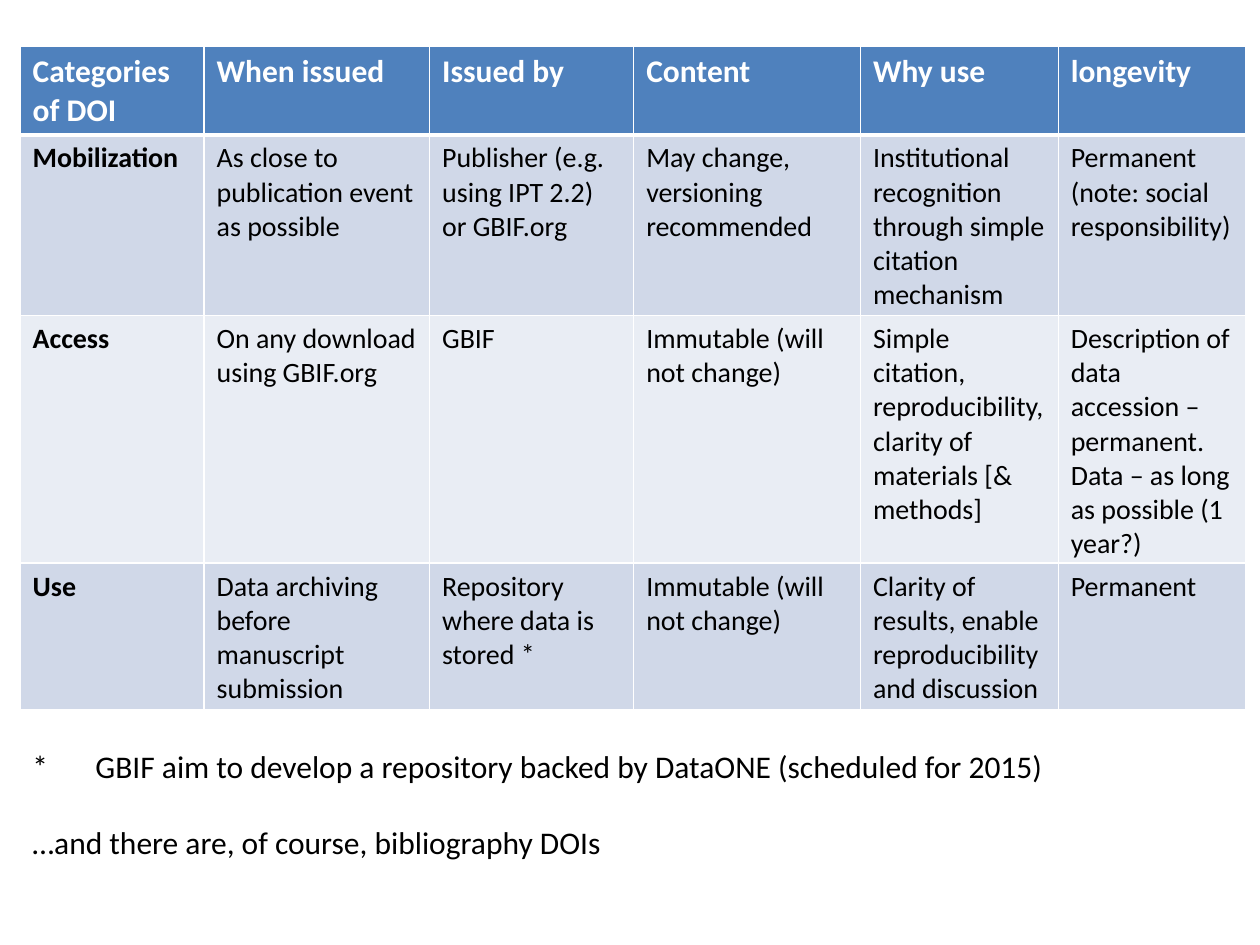
from lxml import etree
from pptx import Presentation
from pptx.dml.color import RGBColor as RGB
from pptx.enum.text import MSO_AUTO_SIZE as AUTO
from pptx.oxml.ns import qn
from pptx.util import Inches, Pt

COLORS = {"header": "4F81BD", "odd": "D0D8E8", "even": "E9EDF4",
          "white": "FFFFFF", "black": "000000"}
FONT = "Calibri"
COL_WIDTHS = [1.46, 1.79, 1.62, 1.8, 1.57, 1.49]
ROW_HEIGHTS = [0.69, 1.42, 1.69, 1.16]
ROWS = [
    [["Categories of DOI"], ["When issued"], ["Issued by"], ["Content"],
     ["Why use"], ["longevity"]],
    [["Mobilization"], ["As close to publication event as possible"],
     ["Publisher (e.g. using IPT 2.2) or GBIF.org"],
     ["May change,\nversioning recommended"],
     ["Institutional recognition through simple citation mechanism"],
     ["Permanent (note: social responsibility)"]],
    [["Access"], ["On any download using GBIF.org"], ["GBIF"],
     ["Immutable (will not change)"],
     ["Simple citation, reproducibility,", "clarity of materials [& methods]"],
     ["Description of data accession – permanent.",
      "Data – as long as possible (1 year?)"]],
    [["Use"], ["Data archiving before manuscript submission"],
     ["Repository where data is stored *"], ["Immutable (will not change)"],
     ["Clarity of results, enable reproducibility and discussion"],
     ["Permanent"]],
]
NOTES = ["*\tGBIF aim to develop a repository backed by DataONE (scheduled for 2015)",
         "…and there are, of course, bibliography DOIs"]


def write(tf, paragraphs, size, color, bold=False):
    for i, text in enumerate(paragraphs):
        p = tf.add_paragraph() if i else tf.paragraphs[0]
        for j, line in enumerate(text.split("\n")):
            if j:
                p.add_line_break()
            r = p.add_run()
            r.text = line
            r.font.name = FONT
            r.font.size = Pt(size)
            r.font.bold = bold
            r.font.color.rgb = RGB.from_string(COLORS[color])


def set_border(cell, side, width):
    tc_pr = cell._tc.get_or_add_tcPr()
    ln = etree.SubElement(tc_pr, qn(f"a:ln{side}"), w=str(Pt(width)))
    fill = etree.SubElement(ln, qn("a:solidFill"))
    etree.SubElement(fill, qn("a:srgbClr"), val=COLORS["white"])


prs = Presentation()
prs.slide_width, prs.slide_height = Inches(10), Inches(7.5)
s = prs.slides.add_slide(prs.slide_layouts[6])

box = s.shapes.add_textbox(Inches(0.16), Inches(5.88), Inches(9.84), Inches(1.01))
tf = box.text_frame
tf.word_wrap = True
tf.auto_size = AUTO.SHAPE_TO_FIT_TEXT
write(tf, NOTES, 18, "black")
tf.paragraphs[1].space_before = Pt(22)

table = s.shapes.add_table(len(ROWS), len(COL_WIDTHS), Inches(0.16), Inches(0.37),
                           Inches(sum(COL_WIDTHS)), Inches(sum(ROW_HEIGHTS))).table
for col, width in zip(table.columns, COL_WIDTHS):
    col.width = Inches(width)
for i, (row, height) in enumerate(zip(ROWS, ROW_HEIGHTS)):
    table.rows[i].height = Inches(height)
    header = i == 0
    for j, paragraphs in enumerate(row):
        cell = table.cell(i, j)
        write(cell.text_frame, paragraphs, 18 if header else 16,
              "white" if header else "black", header or j == 0)
        for side in "LRTB":
            heavy = (i, side) in [(0, "B"), (1, "T")]
            set_border(cell, side, 3 if heavy else 1)
        cell.fill.solid()
        shade = "header" if header else "odd" if i % 2 else "even"
        cell.fill.fore_color.rgb = RGB.from_string(COLORS[shade])

prs.save("out.pptx")
